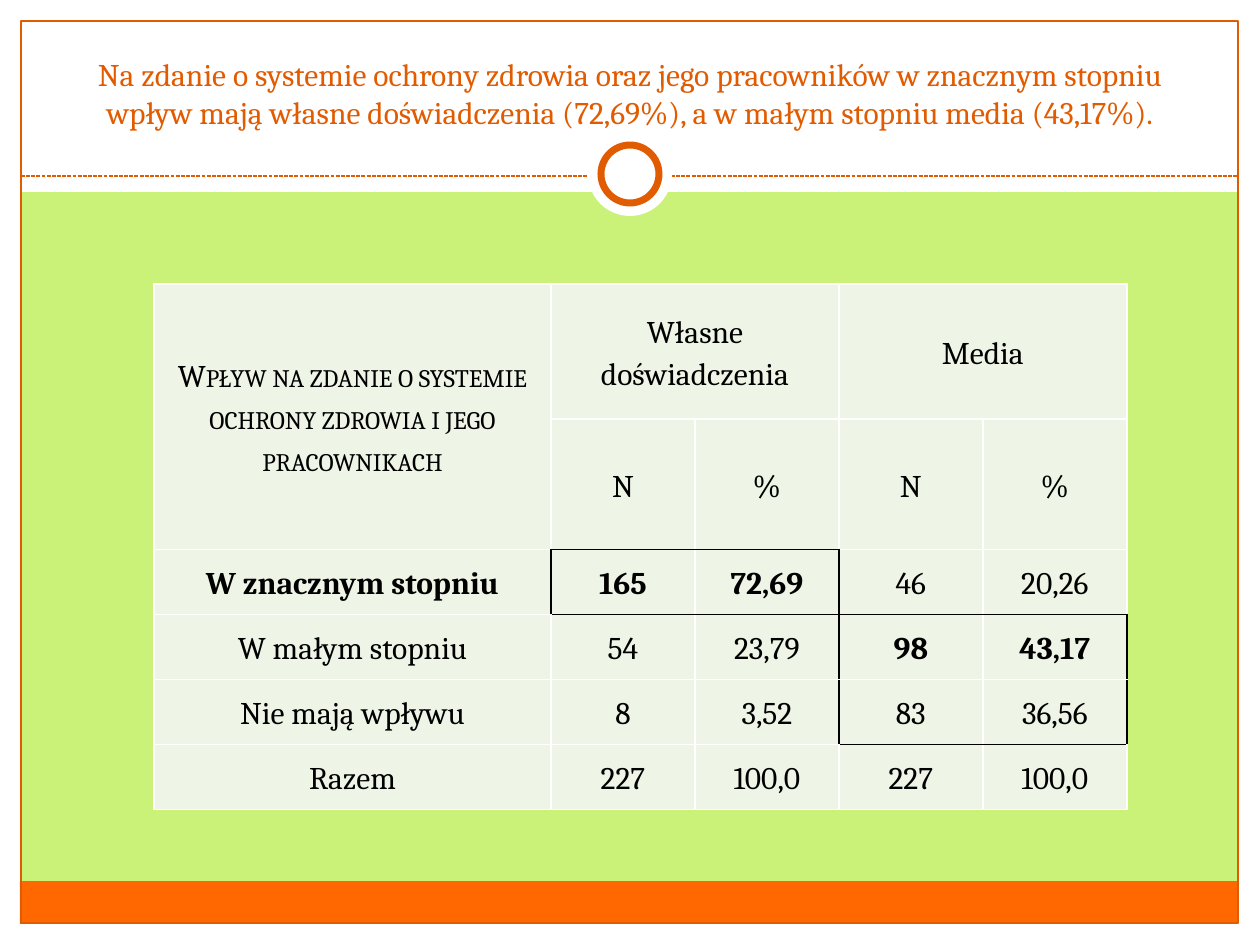
from lxml import etree
from pptx import Presentation
from pptx.dml.color import RGBColor
from pptx.enum.dml import MSO_LINE
from pptx.enum.shapes import MSO_CONNECTOR, MSO_SHAPE
from pptx.enum.text import MSO_ANCHOR, PP_ALIGN
from pptx.oxml.ns import qn
from pptx.util import Pt

RECTANGLE, OVAL = MSO_SHAPE.RECTANGLE, MSO_SHAPE.OVAL
STRAIGHT, DASH = MSO_CONNECTOR.STRAIGHT, MSO_LINE.SQUARE_DOT
CENTER, MIDDLE, BOTTOM = PP_ALIGN.CENTER, MSO_ANCHOR.MIDDLE, MSO_ANCHOR.BOTTOM
PX = 914400 / 126
ORANGE, WHITE, BLACK = "E15B00", "FFFFFF", "000000"
color = RGBColor.from_string


def px(*lengths):
    return [round(length * PX) for length in lengths]


def format_text(paragraph, hex_color, bold=False):
    paragraph.alignment = CENTER
    font = paragraph.runs[0].font
    font.name, font.size, font.bold = "Cambria", Pt(18), bold
    font.color.rgb = color(hex_color)


presentation = Presentation()
presentation.slide_width, presentation.slide_height = px(1260, 945)
slide = presentation.slides.add_slide(presentation.slide_layouts[6])
slide.background.fill.solid()
slide.background.fill.fore_color.rgb = color("CAF278")

# Margins, bottom band, frame, dashed divider and ring, from back to front
decorations = [
    (RECTANGLE, (0, 924, 1260, 21), WHITE, None),
    (RECTANGLE, (0, 0, 1260, 192), WHITE, None),
    (RECTANGLE, (0, 0, 21, 945), WHITE, None),
    (RECTANGLE, (1239, 0, 21, 945), WHITE, None),
    (RECTANGLE, (20, 881, 1218, 43), "FF6700", None),
    (RECTANGLE, (21, 21, 1217, 902), None, 0.75),
    ("divider", (21, 176, 1239, 176), None, 0.75),
    (OVAL, (588, 132, 84, 84), WHITE, None),
    (OVAL, (601, 145, 58, 58), WHITE, 4),
]
for kind, box, fill, line_width in decorations:
    if kind == "divider":
        shape = slide.shapes.add_connector(STRAIGHT, *px(*box))
        etree.SubElement(shape._element.spPr, qn("a:effectLst"))
        shape.line.dash_style = DASH
    else:
        shape = slide.shapes.add_shape(kind, *px(*box))
        shape.shadow.inherit = False
        if fill:
            shape.fill.solid()
            shape.fill.fore_color.rgb = color(fill)
        else:
            shape.fill.background()
    if line_width:
        shape.line.color.rgb = color(ORANGE)
        shape.line.width = Pt(line_width)
    else:
        shape.line.fill.background()

# Title
title = slide.shapes.add_textbox(*px(42, 32, 1176, 105))
text_frame = title.text_frame
text_frame.word_wrap = True
text_frame.vertical_anchor = BOTTOM
text_frame.text = (
    "Na zdanie o systemie ochrony zdrowia oraz jego pracowników w znacznym stopniu "
    "wpływ mają własne doświadczenia (72,69%), a w małym stopniu media (43,17%)."
)
format_text(text_frame.paragraphs[0], ORANGE)

# Table
rows = [
    ["Wpływ na zdanie o systemie ochrony zdrowia i jego pracownikach",
     "Własne doświadczenia", "", "Media", ""],
    ["", "N", "%", "N", "%"],
    ["W znacznym stopniu", "165", "72,69", "46", "20,26"],
    ["W małym stopniu", "54", "23,79", "98", "43,17"],
    ["Nie mają wpływu", "8", "3,52", "83", "36,56"],
    ["Razem", "227", "100,0", "227", "100,0"],
]
bold_cells = {(2, 0), (2, 1), (2, 2), (3, 3), (3, 4)}
# Cells inside the two black outlines; a border is black where an outline is crossed
outlined = {(2, 1): "experience", (2, 2): "experience"}
outlined.update({(row, column): "media" for row in (3, 4) for column in (3, 4)})
sides = {"a:lnL": (0, -1), "a:lnR": (0, 1), "a:lnT": (-1, 0), "a:lnB": (1, 0)}

table = slide.shapes.add_table(6, 5, *px(154, 284, 973, 466)).table
table.first_row = table.horz_banding = False
for column, width in zip(table.columns, px(397, 144, 144, 144, 144)):
    column.width = width
for row, height in zip(table.rows, px(135, 71, 65, 65, 65, 65)):
    row.height = height

for row, texts in enumerate(rows):
    for column, text in enumerate(texts):
        cell = table.cell(row, column)
        cell.vertical_anchor = MIDDLE
        cell.margin_left, cell.margin_right, cell.margin_top, cell.margin_bottom = px(9, 9, 0, 0)
        properties = cell._tc.get_or_add_tcPr()
        for tag, (down, across) in sides.items():
            neighbour = outlined.get((row + down, column + across))
            border_color = WHITE if outlined.get((row, column)) == neighbour else BLACK
            border = etree.SubElement(properties, qn(tag), w=str(Pt(1)))
            border_fill = etree.SubElement(border, qn("a:solidFill"))
            etree.SubElement(border_fill, qn("a:srgbClr"), val=border_color)
        cell.fill.solid()
        cell.fill.fore_color.rgb = color("EEF5E7")
        if text:
            cell.text_frame.text = text
            paragraph = cell.text_frame.paragraphs[0]
            paragraph.line_spacing = 1.15
            format_text(paragraph, BLACK, (row, column) in bold_cells)

heading = table.cell(0, 0)
heading.text_frame.paragraphs[0].runs[0].font._element.set("cap", "small")
heading.merge(table.cell(1, 0))
for column in (1, 3):
    table.cell(0, column).merge(table.cell(0, column + 1))

presentation.save("out.pptx")
